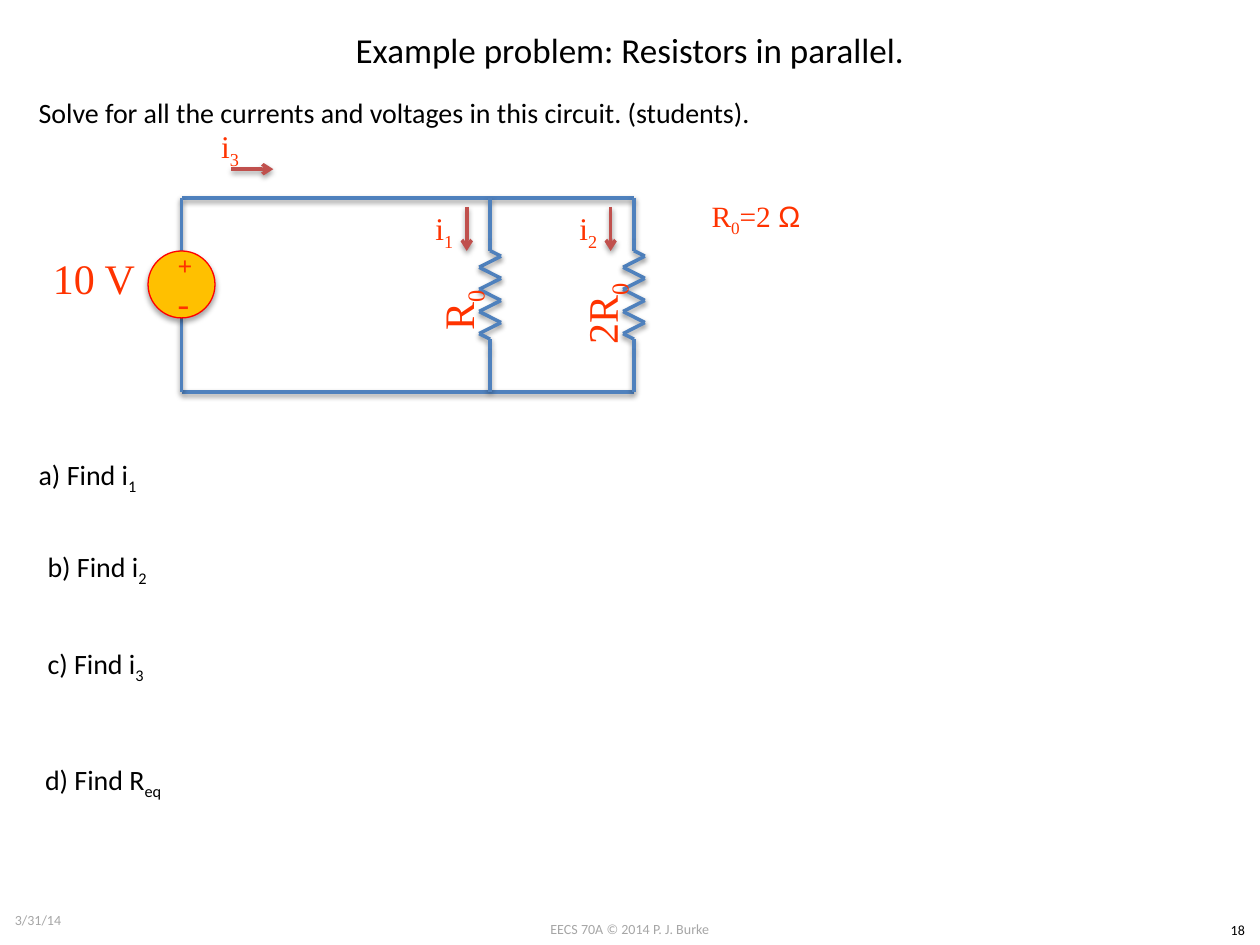
from dataclasses import dataclass
from itertools import pairwise

from lxml import etree
from pptx import Presentation
from pptx.dml.color import RGBColor
from pptx.enum.shapes import MSO_CONNECTOR, MSO_SHAPE
from pptx.enum.text import MSO_ANCHOR, MSO_AUTO_SIZE, PP_ALIGN
from pptx.oxml.ns import qn
from pptx.util import Cm, Pt

STRAIGHT = MSO_CONNECTOR.STRAIGHT
ELLIPSE = MSO_SHAPE.OVAL
CENTER, LEFT = PP_ALIGN.CENTER, PP_ALIGN.LEFT
MIDDLE = MSO_ANCHOR.MIDDLE
GROW = MSO_AUTO_SIZE.SHAPE_TO_FIT_TEXT


@dataclass(frozen=True)
class Theme:
    black: str = "000000"
    gray: str = "A6A6A6"
    label: str = "FF3300"
    wire: str = "4F81BD"
    arrow: str = "C0504D"
    source_fill: str = "FFC000"
    source_line: str = "FF0000"
    sans: str = "Calibri"
    serif: str = "Times New Roman"
    symbol: str = "Arial"
    title: float = 20
    body: float = 16
    value: float = 24
    current: float = 18
    given: float = 16.8
    plus: float = 14.8
    minus: float = 20
    small: float = 8


THEME = Theme()
CENTERED = {"vertical_anchor": MIDDLE, "word_wrap": True}
GROWING = {"word_wrap": False, "auto_size": GROW}
GROWING_WRAPPED = {"word_wrap": True, "auto_size": GROW}


def font_style(name, size, color, bold=False):
    return {"name": name, "size": Pt(size), "bold": bold}, color


BODY = font_style(THEME.sans, THEME.body, THEME.black)
VALUE = font_style(THEME.serif, THEME.value, THEME.label)
CURRENT = font_style(THEME.serif, THEME.current, THEME.label)
GIVEN = font_style(THEME.serif, THEME.given, THEME.label)


def apply_format(target, values):
    for attribute, value in values.items():
        setattr(target, attribute, value)


def add_run(paragraph, text, style, subscript=False):
    run = paragraph.add_run()
    run.text = text
    values, color = style
    apply_format(run.font, values)
    run.font.color.rgb = RGBColor.from_string(color)
    if subscript:
        run._r.get_or_add_rPr().set("baseline", "-25000")


def add_text(slide, box, pieces, style, frame_format=CENTERED, align=CENTER, rotation=0):
    label = slide.shapes.add_textbox(*map(Cm, box))
    label.rotation = rotation
    apply_format(label.text_frame, frame_format)
    paragraph = label.text_frame.paragraphs[0]
    paragraph.alignment = align
    for index, piece in enumerate(pieces):
        add_run(paragraph, piece, style, subscript=index % 2 == 1)
    return paragraph


def add_shadow(shape, opacity, distance):
    effects = etree.SubElement(shape.element.spPr, qn("a:effectLst"))
    shadow = etree.SubElement(
        effects, qn("a:outerShdw"), blurRad=str(Pt(3.1)), dist=str(Pt(distance)),
        dir="5400000", rotWithShape="0")
    color = etree.SubElement(shadow, qn("a:srgbClr"), val=THEME.black)
    etree.SubElement(color, qn("a:alpha"), val=str(opacity * 1000))


def add_wire(shapes, start, end, color=THEME.wire):
    wire = shapes.add_connector(STRAIGHT, *map(Cm, (*start, *end)))
    wire.line.width = Pt(2)
    wire.line.color.rgb = RGBColor.from_string(color)
    add_shadow(wire, 38, 1.6)
    return wire


def add_current_arrow(slide, start, end):
    arrow = add_wire(slide.shapes, start, end, THEME.arrow)
    etree.SubElement(arrow.element.spPr.find(qn("a:ln")), qn("a:tailEnd"), type="arrow")


def add_resistor(slide, x, top, height):
    lead, swing = 0.84, 0.22
    pitch = (height - 2 * lead) / 10
    zigzag = [(swing * (-1) ** turn, lead + (turn + 1.5) * pitch) for turn in range(8)]
    outline = [(0, 0), (0, lead), (0, lead + pitch), *zigzag,
               (0, height - lead - pitch), (0, height - lead), (0, height)]
    resistor = slide.shapes.add_group_shape()
    for start, end in pairwise((x + dx, top + dy) for dx, dy in outline):
        add_wire(resistor.shapes, start, end)


def add_source(slide, x, top, diameter):
    source = slide.shapes.add_shape(
        ELLIPSE, Cm(x - diameter / 2), Cm(top), Cm(diameter), Cm(diameter))
    source.fill.solid()
    source.fill.fore_color.rgb = RGBColor.from_string(THEME.source_fill)
    source.line.color.rgb = RGBColor.from_string(THEME.source_line)
    source.line.width = Pt(0.75)
    add_shadow(source, 35, 1.8)
    signs = (("+", -0.13, THEME.plus, True), ("-", 0.61, THEME.minus, False))
    for sign, drop, size, bold in signs:
        add_text(slide, (x - 0.33, top + drop, 0.66, 0.84), (sign,),
                 font_style(THEME.serif, size, THEME.label, bold))
    add_text(slide, (x - 2.87, top - 0.08, 2.21, 1.24), ("10 V",), VALUE)


def add_circuit(slide, left, top, width, height):
    right, bottom = left + width, top + height
    source_top, diameter = top + 1.07, 1.35
    for start, end in (
        ((right, top), (left, top)),
        ((right, bottom), (left, bottom)),
        ((left, source_top), (left, top)),
        ((left, bottom), (left, source_top + diameter)),
    ):
        add_wire(slide.shapes, start, end)
    add_source(slide, left, source_top, diameter)

    branches = ((left + 6.22, "1", "R", 1.63), (right, "2", "2R", 1.7))
    for x, index, resistance, drop in branches:
        add_resistor(slide, x, top, height)
        add_current_arrow(slide, (x - 0.47, top + 0.18), (x - 0.47, top + 1.07))
        add_text(slide, (x - 2.1, top, 2.36, 1.32), ("i", index), CURRENT)
        add_text(slide, (x - 1.62, top + drop, 2.06, 1.27), (resistance, "0"), VALUE,
                 rotation=270)

    add_current_arrow(slide, (left + 1, top - 0.58), (left + 1.85, top - 0.58))
    add_text(slide, (left - 0.2, top - 1.65, 2.36, 1.32), ("i", "3"), CURRENT)
    given = add_text(slide, (right + 1.19, top - 0.25, 2.54, 1.32), ("R", "0", "=2 "), GIVEN)
    add_run(given, "Ω", font_style(THEME.symbol, THEME.given, THEME.label))


def add_heading(slide, left, top, width, height):
    add_text(slide, (left + 0.74, top, width - 1.48, height),
             ("Example problem: Resistors in parallel.",),
             font_style(THEME.sans, THEME.title, THEME.black))
    add_text(slide, (left, top + 1.8, 15.04, 0.94),
             ("Solve for all the currents and voltages in this circuit. (students).",),
             BODY, GROWING, LEFT)


def add_questions(slide, left, top):
    questions = (
        (0, 0, 2.62, ("a) Find i", "1")),
        (0.18, 1.86, 2.54, ("b) Find i", "2")),
        (0.18, 3.81, 2.49, ("c) Find i", "3")),
        (0.13, 6.15, 2.92, ("d) Find R", "eq")),
    )
    for indent, drop, width, pieces in questions:
        add_text(slide, (left + indent, top + drop, width, 0.94), pieces, BODY, GROWING, LEFT)


def add_footer(slide, left, top, width):
    muted = font_style(THEME.sans, THEME.small, THEME.gray)
    add_text(slide, (left + 0.05, top, 5.92, 1.02), ("3/31/14",), muted, align=LEFT)
    add_text(slide, (left + (width - 5.92) / 2, top + 0.41, 5.92, 0.6),
             ("EECS 70A © 2014 P. J. Burke",), muted, GROWING_WRAPPED)
    add_text(slide, (left + width - 0.89, top + 0.43, 0.89, 0.6), ("18",),
             font_style(THEME.sans, THEME.small, THEME.black), GROWING_WRAPPED)


def main():
    presentation = Presentation()
    apply_format(presentation, {"slide_width": Cm(25.4), "slide_height": Cm(19.05)})
    slide = presentation.slides.add_slide(presentation.slide_layouts[6])
    add_footer(slide, 0, 18.03, 25.4)
    add_heading(slide, 0.53, 0, 24.34, 1.98)
    add_circuit(slide, 3.66, 3.99, 9.12, 3.91)
    add_questions(slide, 0.53, 9.09)
    presentation.save("out.pptx")


if __name__ == "__main__":
    main()
